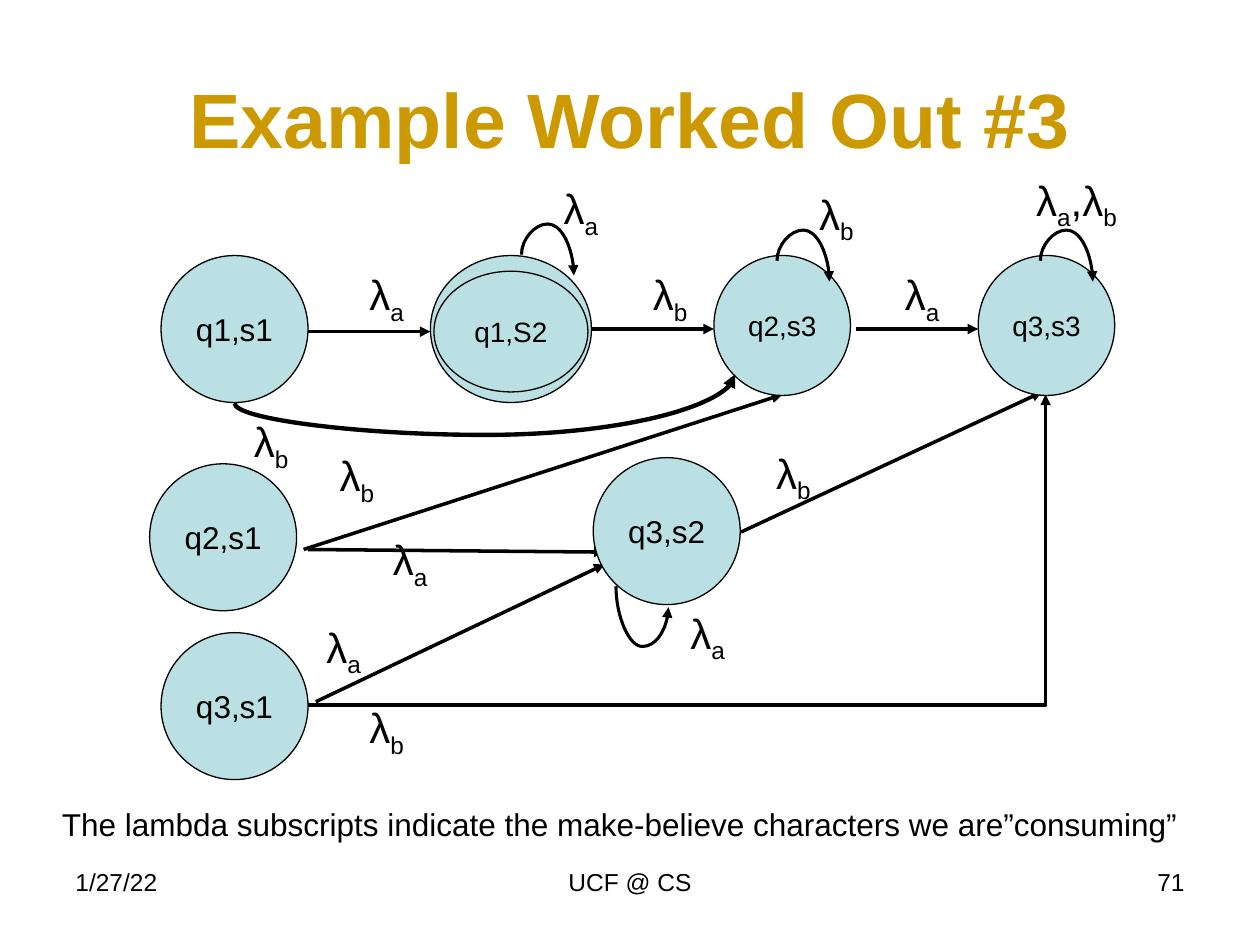
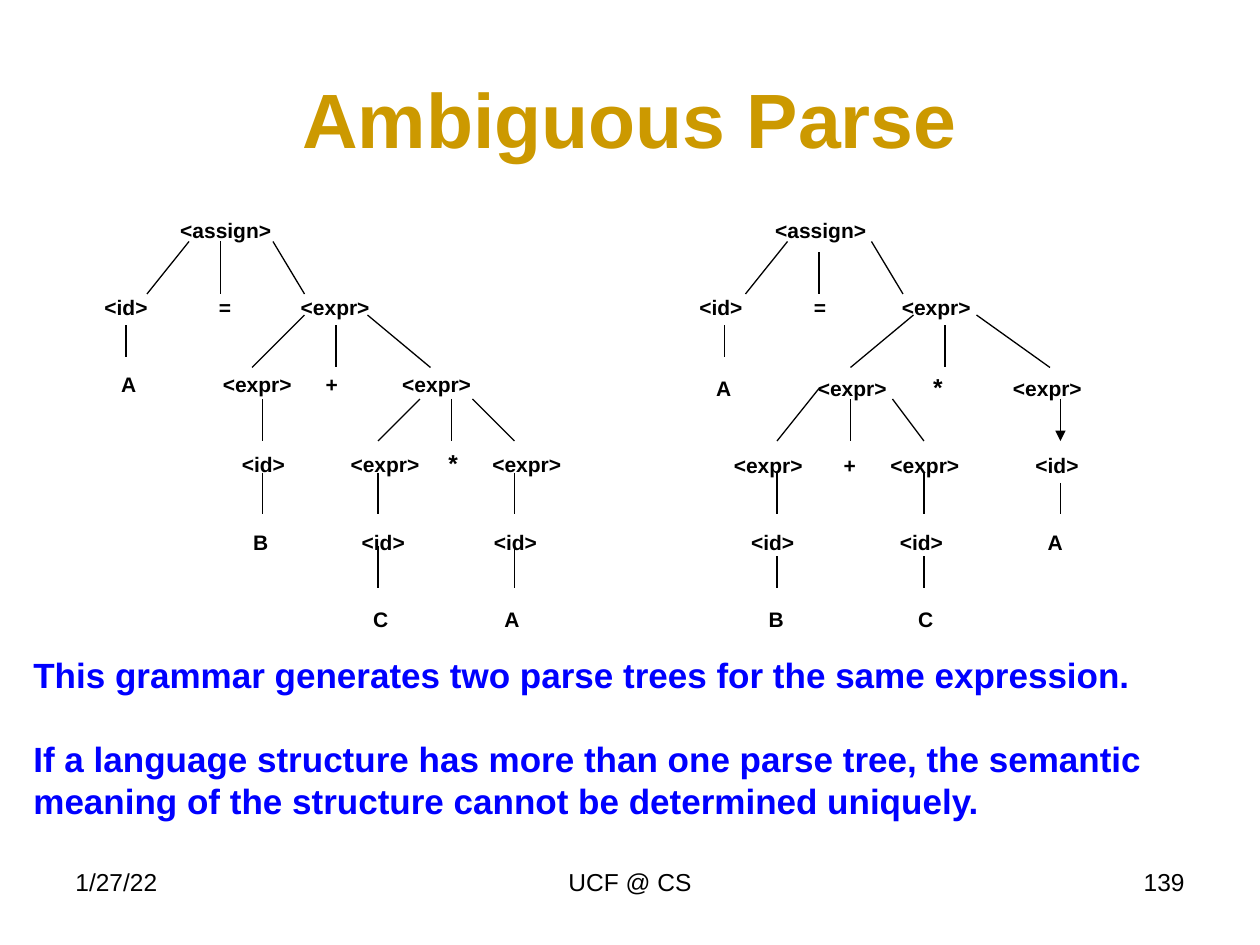
from lxml.etree import SubElement
from pptx import Presentation
from pptx.dml.color import RGBColor
from pptx.enum.shapes import MSO_CONNECTOR, MSO_SHAPE
from pptx.enum.text import MSO_ANCHOR, PP_ALIGN
from pptx.oxml.ns import qn
from pptx.util import Pt

GOLD, BLACK, BLUE, PALE = "CC9900", "000000", "0000FF", "BBE0E3"
TITLE_BOX = (36, 22, 648, 90)
FOOTER_TOP, FOOTER_HEIGHT = 492, 37
LOOP_WIDTH, LOOP_HEIGHT = 30, 12
ROW_GAP = 29.5

STATES = [
    ("q1,s1", (8, 50, 84, 84), 18),
    ("", (162, 50, 92, 84), 18),
    ("q1,S2", (164, 59, 88, 69), 16),
    ("q2,s3", (324, 50, 78, 80), 16),
    ("q3,s3", (475, 50, 78, 80), 16),
    ("q3,s2", (255, 165.5, 84, 84), 18),
    ("q2,s1", (1.5, 169, 84, 84), 18),
    ("q3,s1", (8, 265.5, 84, 84), 18),
]
TRANSITIONS = [
    (92, 93.5, 162, 93.5), (254, 92, 324, 92), (405, 92, 475, 92),
    (89.5, 218, 363, 129.5), (92, 218, 261.5, 219.5),
    (339.5, 208, 511.5, 128), (96.5, 305, 261.5, 226.5),
]
TOP_LOOPS = [(214, 49.5), (360, 53), (510.5, 53)]
BOTTOM_LOOP = (268, 239)
LABELS = [
    ("λa", 120, 54), ("λa", 231, 5), ("λb", 282, 54), ("λb", 377, 8),
    ("λa,λb", 501, 0), ("λa", 426, 54), ("λb", 103, 157.5),
    ("λa", 133.5, 205.5), ("λb", 352.5, 156), ("λa", 303.5, 247.5),
    ("λa", 95.5, 255.5), ("λb", 120, 301.5), ("λb", 54, 138),
]

SUM_TREE_ROWS = [
    [("<assign>", 93)],
    [("<id>", 36), ("=", 92.5), ("<expr>", 155.5)],
    [("A", 37.5), ("<expr>", 111), ("+", 153.5), ("<expr>", 213.5)],
    [("<id>", 114.5), ("<expr>", 184), ("*", 223), ("<expr>", 265)],
    [("B", 113), ("<id>", 183), ("<id>", 258.5)],
    [("C", 181.5), ("A", 256.5)],
]
SUM_TREE_BRANCHES = [
    (72, 24, 48, 54), (90, 24, 90, 54), (120, 24, 138, 54),
    (36, 72, 36, 90), (138, 66, 108, 96), (156, 72, 156, 96),
    (174, 66, 210, 96), (114, 114, 114, 138), (204, 114, 180, 138),
    (222, 114, 222, 138), (234, 114, 258, 138), (114, 156, 114, 180),
    (180, 156, 180, 180), (258, 156, 258, 180),
    (180, 198, 180, 222), (258, 198, 258, 222),
]
PRODUCT_TREE_ROWS = [
    [("<assign>", 91)],
    [("<id>", 34), ("=", 90.5), ("<expr>", 157)],
    [("A", 35.5), ("<expr>", 109), ("*", 158), ("<expr>", 220.5)],
    [("<expr>", 61), ("+", 107.5), ("<expr>", 150.5), ("<id>", 226)],
    [("<id>", 63.5), ("<id>", 148.5), ("A", 225)],
    [("B", 65.5), ("C", 151)],
]
PRODUCT_TREE_BRANCHES = [
    (72, 24, 48, 54), (90, 30, 90, 54), (120, 24, 138, 54),
    (36, 72, 36, 90), (144, 66, 108, 96), (162, 72, 162, 96),
    (180, 66, 222, 96), (90, 108, 66, 138), (108, 114, 108, 138),
    (132, 114, 150, 138), (66, 156, 66, 180), (150, 156, 150, 180),
    (228, 162, 228, 180), (66, 204, 66, 222), (150, 204, 150, 222),
]
PRODUCT_TREE_ARROW = (228, 114, 228, 138)


def color(value):
    """Turn a hex string into a colour."""
    return RGBColor.from_string(value)


def apply(target, values):
    """Set each attribute of the target from a dict."""
    for name, value in values.items():
        setattr(target, name, value)


def shift(origin, box):
    """Move a box or a pair of points by the origin."""
    left, top = origin
    return (box[0] + left, box[1] + top, box[2] + left, box[3] + top)


def add_run(paragraph, text, size, hue=BLACK, bold=False):
    """Add a formatted run to the paragraph."""
    run = paragraph.add_run()
    run.text = text
    apply(run.font, {"name": "Arial", "size": Pt(size), "bold": bold})
    run.font.color.rgb = color(hue)
    return run


def add_text_box(slide, box, wrap=True):
    """Add an empty text box and return its text frame."""
    frame = slide.shapes.add_textbox(*map(Pt, box)).text_frame
    frame.word_wrap = wrap
    return frame


def add_line(slide, ends, weight, arrow=False, kind=MSO_CONNECTOR.STRAIGHT):
    """Add a black connector, with an arrowhead if asked."""
    connector = slide.shapes.add_connector(kind, *map(Pt, ends))
    connector.line.color.rgb = color(BLACK)
    connector.line.width = Pt(weight)
    properties = connector._element.spPr
    if arrow:
        SubElement(properties.find(qn("a:ln")), qn("a:tailEnd"), type="triangle")
    SubElement(properties, qn("a:effectLst"))
    return connector


def add_curve(slide, ends, weight, turn, flips, bulge):
    """Add a curved arrow that leaves and arrives vertically."""
    left, top, right, bottom = ends
    width, height = abs(bottom - top), abs(right - left)
    x, y = (left + right - width) / 2, (top + bottom - height) / 2
    connector = add_line(slide, (x, y, x + width, y + height), weight, True,
                         MSO_CONNECTOR.CURVE)
    properties = connector._element.spPr
    frame = properties.find(qn("a:xfrm"))
    frame.set("rot", str(turn * 60000))
    for flip in flips:
        frame.set(flip, "1")
    adjustments = properties.find(qn("a:prstGeom")).find(qn("a:avLst"))
    SubElement(adjustments, qn("a:gd"), name="adj1", fmla=f"val {bulge}")


def add_state(slide, origin, name, box, size):
    """Add one state of the automaton."""
    left, top, width, height = box
    ellipse = slide.shapes.add_shape(
        MSO_SHAPE.OVAL,
        *map(Pt, (left + origin[0], top + origin[1], width, height)))
    ellipse.shadow.inherit = False
    ellipse.fill.solid()
    ellipse.fill.fore_color.rgb = color(PALE)
    ellipse.line.color.rgb = color(BLACK)
    ellipse.line.width = Pt(0.75)
    if name:
        frame = ellipse.text_frame
        apply(frame, {"word_wrap": False, "vertical_anchor": MSO_ANCHOR.MIDDLE})
        frame.paragraphs[0].alignment = PP_ALIGN.CENTER
        add_run(frame.paragraphs[0], name, size)


def add_label(slide, origin, text, left, top):
    """Add a lambda label with lowered letters."""
    width = 42 if len(text) == 2 else 78
    frame = add_text_box(slide, (left + origin[0], top + origin[1], width, 36))
    for letter in text:
        run = add_run(frame.paragraphs[0], letter, 24)
        if letter in "ab":
            run.font._element.set("baseline", "-25000")


def add_automaton(slide, origin):
    """Draw the states, transitions and labels from the given corner."""
    for ends in TRANSITIONS:
        add_line(slide, shift(origin, ends), 2, True)
    elbow = add_line(slide, shift(origin, (92, 307, 513.5, 129.5)), 2, True,
                     MSO_CONNECTOR.ELBOW)
    elbow._element.spPr.find(qn("a:prstGeom")).set("prst", "bentConnector2")
    for name, box, size in STATES:
        add_state(slide, origin, name, box, size)
    loops = [(start, -146300) for start in TOP_LOOPS] + [(BOTTOM_LOOP, 287200)]
    for (left, top), bulge in loops:
        ends = (left, top, left + LOOP_WIDTH, top + LOOP_HEIGHT)
        add_curve(slide, shift(origin, ends), 1.75, 270, ["flipH"], bulge)
    add_curve(slide, shift(origin, (50, 134.5, 336, 118)), 2.5, 90,
              ["flipH", "flipV"], -109700)
    for label in LABELS:
        add_label(slide, origin, *label)


def add_tree(slide, origin, rows, branches):
    """Draw a parse tree, its tokens centred on tab stops."""
    frame = add_text_box(slide, (*origin, 300, 250), False)
    apply(frame, {"margin_left": 0, "margin_right": 0, "margin_top": Pt(10.5)})
    for index, row in enumerate(rows):
        paragraph = frame.paragraphs[0] if index == 0 else frame.add_paragraph()
        paragraph.space_before = Pt(ROW_GAP if index else 0)
        stops = SubElement(paragraph._p.get_or_add_pPr(), qn("a:tabLst"))
        for token, centre in row:
            SubElement(stops, qn("a:tab"), pos=str(Pt(centre)), algn="ctr")
            add_run(paragraph, "\t" + token, 14 if token == "*" else 12, bold=True)
    for ends in branches:
        add_line(slide, shift(origin, ends), 0.75)


def add_statement(slide, box, texts, size, hue, bold, alignment):
    """Write paragraphs separated by one line of space."""
    frame = add_text_box(slide, box)
    for index, text in enumerate(texts):
        paragraph = frame.paragraphs[0] if index == 0 else frame.add_paragraph()
        apply(paragraph, {"alignment": alignment,
                          "space_before": Pt(24 if index else 0)})
        add_run(paragraph, text, size, hue, bold)


def start_slide(presentation, title, number):
    """Add a slide with its title and footers."""
    slide = presentation.slides.add_slide(presentation.slide_layouts[5])
    placeholder = slide.shapes.title
    apply(placeholder, dict(zip(("left", "top", "width", "height"),
                                map(Pt, TITLE_BOX))))
    frame = placeholder.text_frame
    apply(frame, {"vertical_anchor": MSO_ANCHOR.MIDDLE, "word_wrap": True})
    frame.paragraphs[0].alignment = PP_ALIGN.CENTER
    add_run(frame.paragraphs[0], title, 44, GOLD, True)
    footers = [("1/27/22", 36, 168, PP_ALIGN.LEFT),
               ("UCF @ CS", 246, 228, PP_ALIGN.CENTER),
               (number, 516, 168, PP_ALIGN.RIGHT)]
    for text, left, width, alignment in footers:
        add_statement(slide, (left, FOOTER_TOP, width, FOOTER_HEIGHT), [text],
                      14, BLACK, False, alignment)
    return slide


def build_automaton_slide(presentation):
    """Build the slide with the worked example."""
    slide = start_slide(presentation, "Example Worked Out #3", "71")
    add_automaton(slide, (84, 96))
    add_statement(slide, (24, 456.5, 660, 29), [
        "The lambda subscripts indicate the make-believe characters "
        "we are”consuming”"], 18, BLACK, False, PP_ALIGN.CENTER)


def build_parse_slide(presentation):
    """Build the slide with the two parse trees."""
    slide = start_slide(presentation, "Ambiguous Parse", "139")
    add_statement(slide, (12, 370, 660, 104), [
        "This grammar generates two parse trees for the same expression.",
        "If a language structure has more than one parse tree, the semantic "
        "meaning of the structure cannot be determined uniquely.",
    ], 20, BLUE, True, PP_ALIGN.LEFT)
    add_tree(slide, (36, 114), SUM_TREE_ROWS, SUM_TREE_BRANCHES)
    product_corner = (378, 114)
    add_tree(slide, product_corner, PRODUCT_TREE_ROWS, PRODUCT_TREE_BRANCHES)
    add_line(slide, shift(product_corner, PRODUCT_TREE_ARROW), 0.75, True)


def main():
    """Build and save the presentation."""
    presentation = Presentation()
    apply(presentation, {"slide_width": Pt(720), "slide_height": Pt(540)})
    build_automaton_slide(presentation)
    build_parse_slide(presentation)
    presentation.save("out.pptx")


if __name__ == "__main__":
    main()
